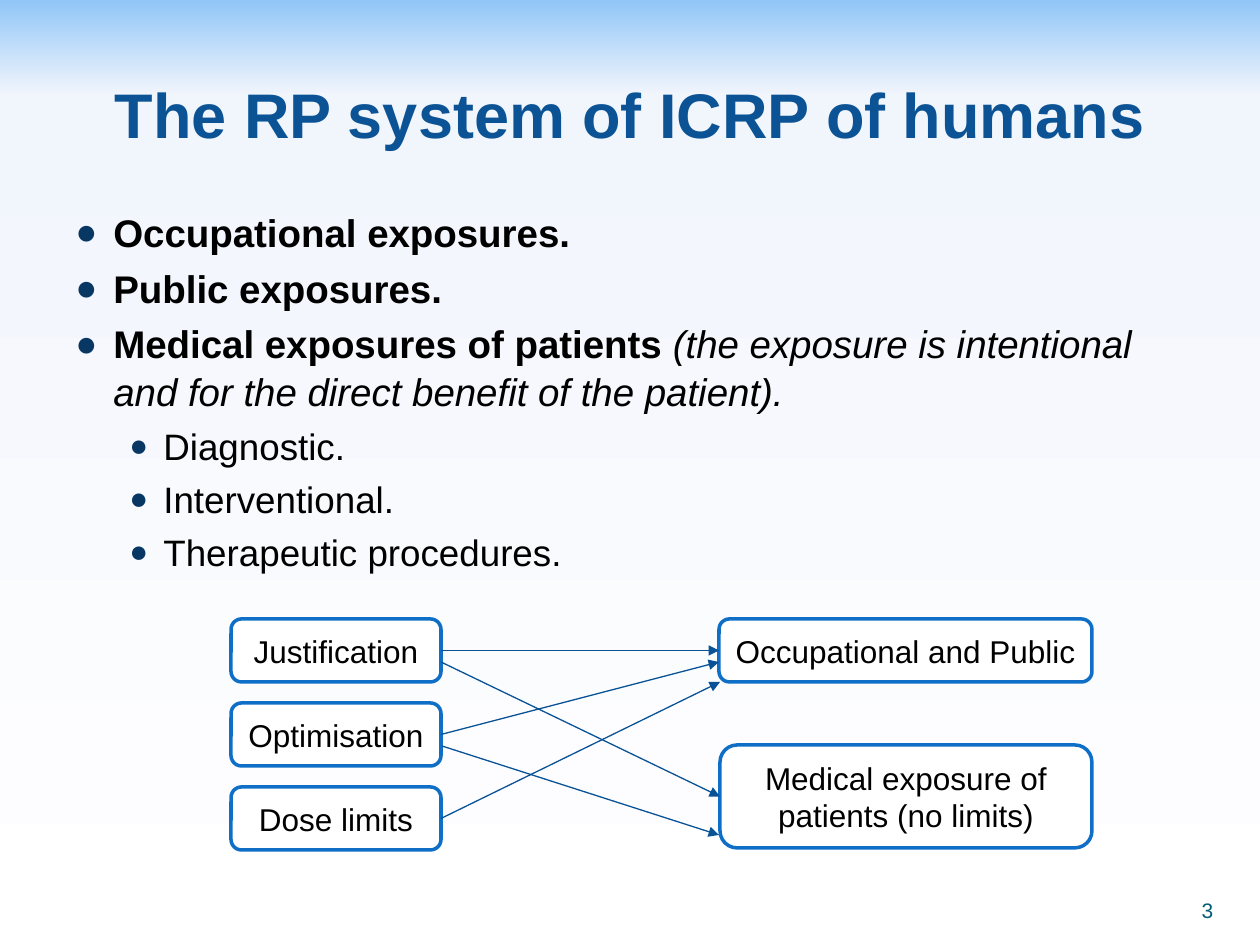
from dataclasses import dataclass

from lxml.etree import SubElement
from pptx import Presentation
from pptx.dml.color import RGBColor
from pptx.enum.shapes import MSO_CONNECTOR, MSO_SHAPE
from pptx.enum.text import MSO_ANCHOR, MSO_AUTO_SIZE, PP_ALIGN
from pptx.oxml.ns import qn
from pptx.util import Emu, Pt

SCALE = 914400 / 126
RIGHT, LEFT = 3, 1


def px(n):
    return Emu(round(n * SCALE))


@dataclass(frozen=True)
class Theme:
    font: str = "Arial"
    title: str = "0B5394"
    text: str = "000000"
    dot: str = "083763"
    page: str = "045D75"
    fill: str = "FFFFFF"
    edge: str = "0F6FC6"
    arrow: str = "095295"
    sky: tuple = ((0, "91C6F7"), (10, "F1F5FC"), (100, "FFFFFF"))
    head: int = 36
    main: int = 22
    sub: int = 21
    label: int = 18
    small: int = 12


def write(para, text, size, color, font=Theme.font, bold=False, italic=False):
    run = para.add_run()
    run.text = text
    style = run.font
    style.name, style.size = font, Pt(size)
    style.bold, style.italic = bold, italic
    style.color.rgb = RGBColor.from_string(color)


def inset(frame, top=0):
    """Clear the margins of a frame, except for the top one."""
    frame.margin_left = frame.margin_right = frame.margin_bottom = 0
    frame.margin_top = px(top)


def bullet(para, left, hang, scale, color):
    props = para._p.get_or_add_pPr()
    props.set("marL", str(px(left)))
    props.set("indent", str(-px(hang)))
    tint = SubElement(props, qn("a:buClr"))
    SubElement(tint, qn("a:srgbClr"), val=color)
    SubElement(props, qn("a:buSzPct"), val=str(scale * 1000))
    SubElement(props, qn("a:buFont"), typeface=Theme.font)
    SubElement(props, qn("a:buChar"), char="●")


class Page:
    def __init__(self, deck, theme):
        self.theme = theme
        self.slide = deck.slides.add_slide(deck.slide_layouts[5])
        self.shapes = self.slide.shapes

    def sky(self):
        fill = self.slide.background.fill
        fill.gradient()
        fill.gradient_angle = 270
        stops = self.slide.element.find(".//" + qn("a:gsLst"))
        stops.clear()
        for pos, color in self.theme.sky:
            stop = SubElement(stops, qn("a:gs"), pos=str(pos * 1000))
            SubElement(stop, qn("a:srgbClr"), val=color)

    def title(self, text, x, y, w, h):
        shape = self.shapes.title
        shape.left, shape.top, shape.width, shape.height = map(px, (x, y, w, h))
        frame = shape.text_frame
        frame.auto_size = MSO_AUTO_SIZE.NONE
        frame.vertical_anchor = MSO_ANCHOR.MIDDLE
        inset(frame, top=6)
        para = frame.paragraphs[0]
        para.alignment = PP_ALIGN.CENTER
        write(para, text, self.theme.head, self.theme.title, bold=True)

    def frame(self, x, y, w, h):
        frame = self.shapes.add_textbox(*map(px, (x, y, w, h))).text_frame
        frame.word_wrap = True
        return frame

    def points(self, items, x, y, w, h):
        """Add bullets from (level, bold part, plain part, italic part)."""
        frame, look = self.frame(x, y, w, h), self.theme
        for i, (level, strong, plain, slant) in enumerate(items):
            para = frame.add_paragraph() if i else frame.paragraphs[0]
            size = look.sub if level else look.main
            para.level = level
            para.line_spacing = 1.04
            para.space_before = Pt(size * 0.2 if i else 0)
            if level:
                bullet(para, 88, 34, 85, look.dot)
            else:
                bullet(para, 38, 38, 95, look.dot)
            if strong:
                write(para, strong, size, look.text, bold=True)
            if plain:
                write(para, plain, size, look.text)
            if slant:
                write(para, slant, size, look.text, italic=True)

    def number(self, text, x, y, w, h):
        frame = self.frame(x, y, w, h)
        frame.vertical_anchor = MSO_ANCHOR.BOTTOM
        inset(frame)
        para = frame.paragraphs[0]
        para.alignment = PP_ALIGN.CENTER
        write(para, text, self.theme.small, self.theme.page)

    def box(self, text, x, y, w, h):
        shape = self.shapes.add_shape(
            MSO_SHAPE.ROUNDED_RECTANGLE, *map(px, (x, y, w, h)))
        shape.shadow.inherit = False
        shape.fill.solid()
        shape.fill.fore_color.rgb = RGBColor.from_string(self.theme.fill)
        shape.line.color.rgb = RGBColor.from_string(self.theme.edge)
        shape.line.width = Pt(2)
        frame = shape.text_frame
        frame.word_wrap = True
        frame.vertical_anchor = MSO_ANCHOR.MIDDLE
        para = frame.paragraphs[0]
        para.alignment = PP_ALIGN.CENTER
        write(para, text, self.theme.label, self.theme.text)
        return shape

    def arrow(self, start, end):
        """Draw an arrow; each end is a point or a box to join."""
        points = [(0, 0) if hasattr(e, "shape_id") else e for e in (start, end)]
        line = self.shapes.add_connector(
            MSO_CONNECTOR.STRAIGHT, *map(px, points[0] + points[1]))
        if hasattr(start, "shape_id"):
            line.begin_connect(start, RIGHT)
        if hasattr(end, "shape_id"):
            line.end_connect(end, LEFT)
        line.line.color.rgb = RGBColor.from_string(self.theme.arrow)
        line.line.width = Pt(0.75)
        SubElement(line.line._get_or_add_ln(), qn("a:tailEnd"), type="triangle")
        SubElement(line._element.spPr, qn("a:effectLst"))


def main():
    deck = Presentation()
    deck.slide_width, deck.slide_height = px(1260), px(945)
    page = Page(deck, Theme())
    page.sky()
    page.title("The RP system of ICRP of humans", 63, 42, 1134, 136)
    page.points([
        (0, "Occupational exposures.", "", ""),
        (0, "Public exposures.", "", ""),
        (0, "Medical exposures of patients ", "",
         "(the exposure is intentional and for the direct benefit of the patient)."),
        (1, "", "Diagnostic.", ""),
        (1, "", "Interventional.", ""),
        (1, "", "Therapeutic procedures.", ""),
    ], 63, 201, 1144, 390)
    page.number("3", 1176, 888, 63, 35)

    names = ("Justification", "Optimisation", "Dose limits")
    just, opt, dose = [page.box(name, 231, 619 + 84 * i, 210, 63)
                       for i, name in enumerate(names)]
    public = page.box("Occupational and Public", 719, 619, 373, 63)
    medical = page.box("Medical exposure of patients (no limits)",
                       720, 745, 372, 103)
    for start, end in (
        (just, public),
        (opt, (719, 662)),
        (dose, (720, 682)),
        ((441, 662), medical),
        ((442, 746), (719, 835)),
    ):
        page.arrow(start, end)
    deck.save("out.pptx")


if __name__ == "__main__":
    main()
